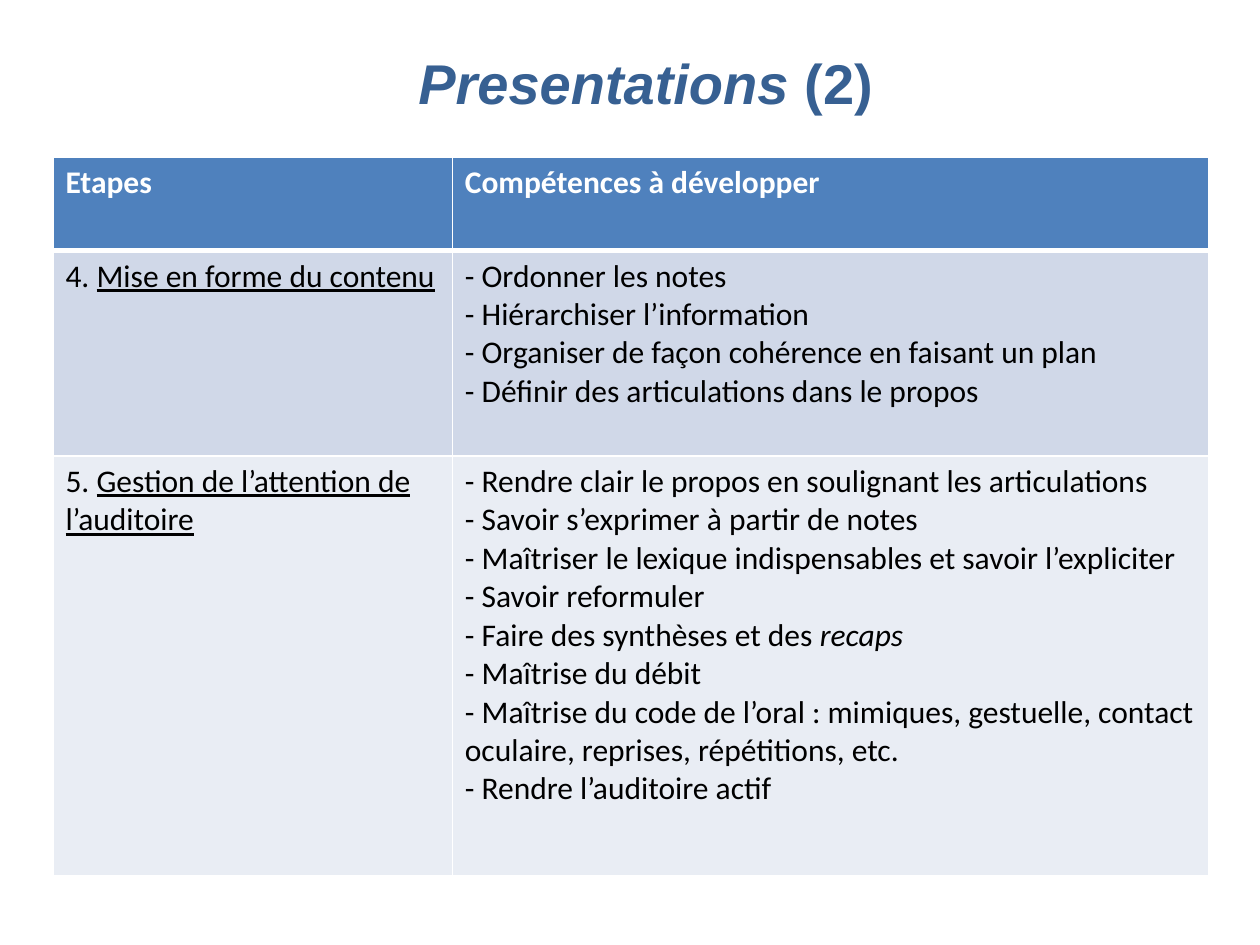
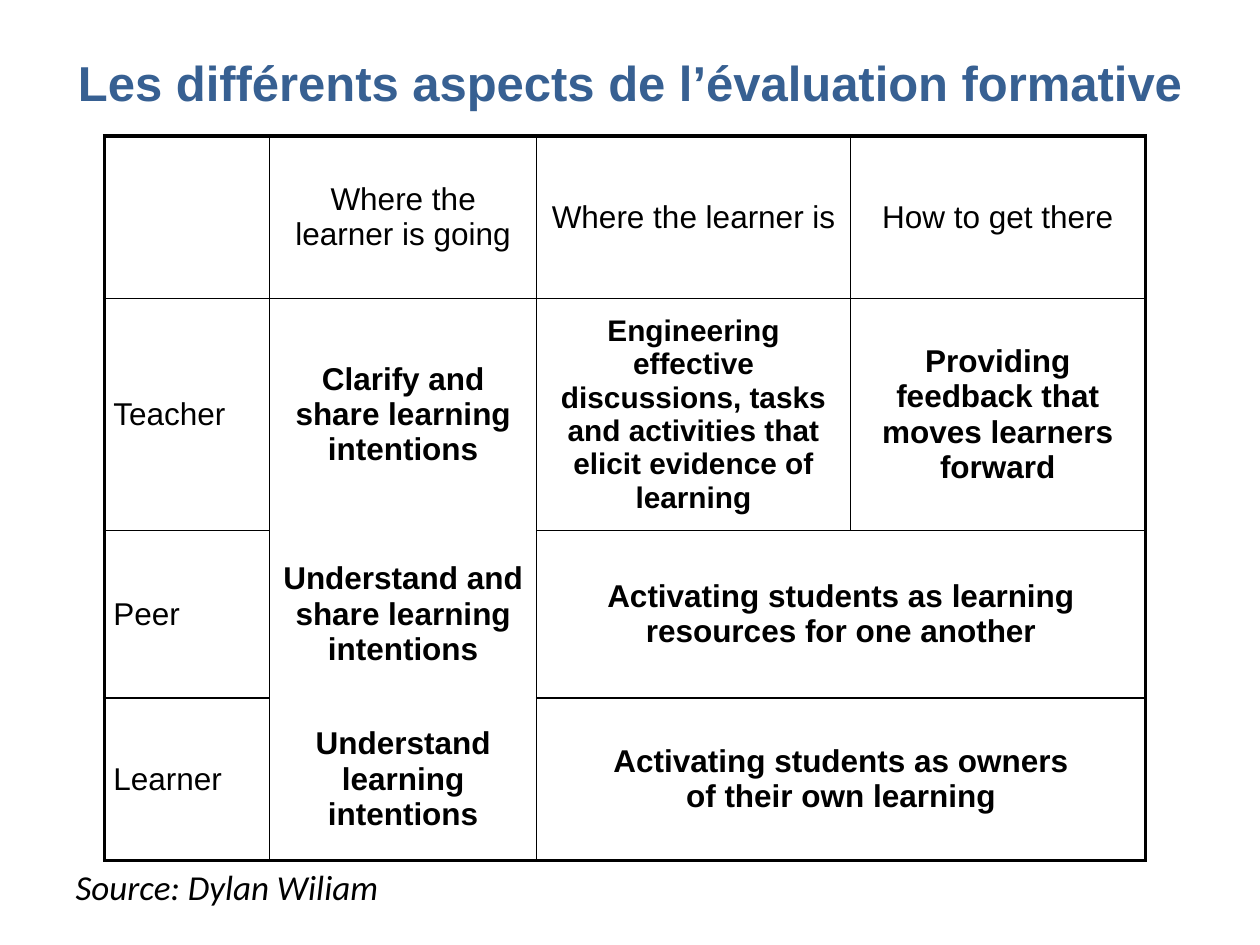
from lxml.etree import SubElement
from pptx import Presentation
from pptx.dml.color import RGBColor
from pptx.enum.text import MSO_ANCHOR as Anchor, MSO_AUTO_SIZE as AutoSize, PP_ALIGN as Align
from pptx.oxml.ns import qn
from pptx.util import Inches, Pt

COLORS = {
    "title": "376092",
    "header": "4F81BD",
    "band_dark": "D0D8E8",
    "band_light": "E9EDF4",
    "white": "FFFFFF",
    "black": "000000",
}


def write(text_frame, paragraphs, font_name, size, color, bold=False, align=Align.LEFT):
    for index, text in enumerate(paragraphs):
        paragraph = text_frame.add_paragraph() if index else text_frame.paragraphs[0]
        first, *others = text.split("|")
        paragraph.text = first
        for other in others:
            paragraph.add_run().text = other
        paragraph.alignment = align
        for run in paragraph.runs:
            run.font.name = font_name
            run.font.size = Pt(size)
            run.font.bold = bold
            run.font.color.rgb = RGBColor.from_string(COLORS[color])


def paint_cell(cell, fill, border, widths):
    properties = cell._tc.get_or_add_tcPr()
    for side, width in zip("LRTB", widths):
        line = SubElement(properties, qn(f"a:ln{side}"), w=str(Pt(width)))
        if width:
            solid = SubElement(line, qn("a:solidFill"))
            SubElement(solid, qn("a:srgbClr"), val=COLORS[border])
        else:
            SubElement(line, qn("a:noFill"))
    cell.fill.solid()
    cell.fill.fore_color.rgb = RGBColor.from_string(COLORS[fill])


presentation = Presentation()
presentation.slide_width = Inches(10)
presentation.slide_height = Inches(7.5)
column = presentation.slide_width / 100
row = presentation.slide_height / 75

TITLES = [
    (5, "Presentations| (2)", 32, 5, 92.5),
    (1, "Les différents aspects de l’évaluation formative", 28, 0, 100),
]
for layout, text, size, left, width in TITLES:
    slide = presentation.slides.add_slide(presentation.slide_layouts[layout])
    title = slide.shapes.title
    title.left, title.top = int(left * column), int(3 * row)
    title.width, title.height = int(width * column), int(7 * row)
    title.text_frame.auto_size = AutoSize.NONE
    title.text_frame.vertical_anchor = Anchor.MIDDLE
    write(title.text_frame, [text], "Arial", size, "title", True, Align.CENTER)

skills_slide, assessment_slide = presentation.slides
skills_slide.shapes.title.text_frame.paragraphs[0].runs[0].font.italic = True

source = assessment_slide.placeholders[1]
source.left, source.top = int(5 * column), int(68.2 * row)
source.width, source.height = int(91.7 * column), int(5.2 * row)
source.text_frame.auto_size = AutoSize.NONE
paragraph_properties = source.text_frame.paragraphs[0]._p.get_or_add_pPr()
paragraph_properties.set("marL", "0")
paragraph_properties.set("indent", "0")
SubElement(paragraph_properties, qn("a:buNone"))
write(source.text_frame, ["Source: Dylan Wiliam"], "Calibri", 20, "black")
source.text_frame.paragraphs[0].space_before = Pt(0)
source.text_frame.paragraphs[0].runs[0].font.italic = True

SKILLS = [
    (["Etapes"], ["Compétences à développer"]),
    (
        ["4. |Mise en forme du contenu"],
        [
            "- Ordonner les notes",
            "- Hiérarchiser l’information",
            "- Organiser de façon cohérence en faisant un plan",
            "- Définir des articulations dans le propos",
        ],
    ),
    (
        ["5. |Gestion de l’attention de l’auditoire"],
        [
            "- Rendre clair le propos en soulignant les articulations",
            "- Savoir s’exprimer à partir de notes",
            "- Maîtriser le lexique indispensables et savoir l’expliciter",
            "- Savoir reformuler",
            "- Faire des synthèses et des |recaps",
            "- Maîtrise du débit",
            "- Maîtrise du code de l’oral : mimiques, gestuelle, contact oculaire, reprises, répétitions, etc.",
            "- Rendre l’auditoire actif",
        ],
    ),
]
ASSESSMENT = [
    ("", "Where the learner is going", "Where the learner is", "How to get there"),
    (
        "Teacher",
        "Clarify and share learning intentions",
        "Engineering effective discussions, tasks and activities that elicit evidence of learning",
        "Providing feedback that moves learners forward",
    ),
    (
        "Peer",
        "Understand and share learning intentions",
        "Activating students as learning\nresources for one another",
        "",
    ),
    (
        "Learner",
        "Understand learning intentions",
        "Activating students as owners\vof their own learning",
        "",
    ),
]

GRIDS = [
    (skills_slide, 4.2, 12.5, (31.7, 60), (7.4, 16.3, 33.3)),
    (assessment_slide, 8.3, 10.8, (13.1, 21.2, 24.9, 23.4), (12.9, 18.4, 13.3, 12.9)),
]
tables = []
for slide, left, top, widths, heights in GRIDS:
    frame = slide.shapes.add_table(
        len(heights), len(widths), int(left * column), int(top * row),
        int(sum(widths) * column), int(sum(heights) * row),
    )
    table = frame.table
    table.first_row = table.horz_banding = False
    for table_column, width in zip(table.columns, widths):
        table_column.width = int(width * column)
    for table_row, height in zip(table.rows, heights):
        table_row.height = int(height * row)
    tables.append(table)
skills_table, assessment_table = tables

fills = ("header", "band_dark", "band_light")
for r, contents in enumerate(SKILLS):
    for c, paragraphs in enumerate(contents):
        cell = skills_table.cell(r, c)
        header = r == 0
        write(cell.text_frame, paragraphs, "Calibri", 18, "white" if header else "black", header)
        for paragraph in cell.text_frame.paragraphs:
            for run in paragraph.runs[1:]:
                run.font.underline = c == 0
                run.font.italic = c == 1
        paint_cell(cell, fills[r], "white", (1, 1, 3 if r == 1 else 1, 3 if header else 1))

for r in (2, 3):
    assessment_table.cell(r, 2).merge(assessment_table.cell(r, 3))
for r, contents in enumerate(ASSESSMENT):
    for c, text in enumerate(contents):
        cell = assessment_table.cell(r, c)
        cell.vertical_anchor = Anchor.MIDDLE
        cell.margin_left = cell.margin_right = Inches(0.07)
        cell.margin_top = cell.margin_bottom = Inches(0.05)
        if text:
            size = 17 if (r, c) == (1, 2) else 18
            align = Align.CENTER if c else Align.LEFT
            write(cell.text_frame, text.split("\n"), "Arial", size, "black", r > 0 and c > 0, align)
        left = 2.25 if c == 0 else 1
        right = 2.25 if c == 3 or cell.is_merge_origin else 1
        top = 2.25 if r == 0 else 0 if c == 1 and r > 1 else 1
        bottom = 2.25 if r == 3 else 0 if c == 1 and r > 0 else 1
        paint_cell(cell, "white", "black", (left, right, top, bottom))

presentation.save("out.pptx")
